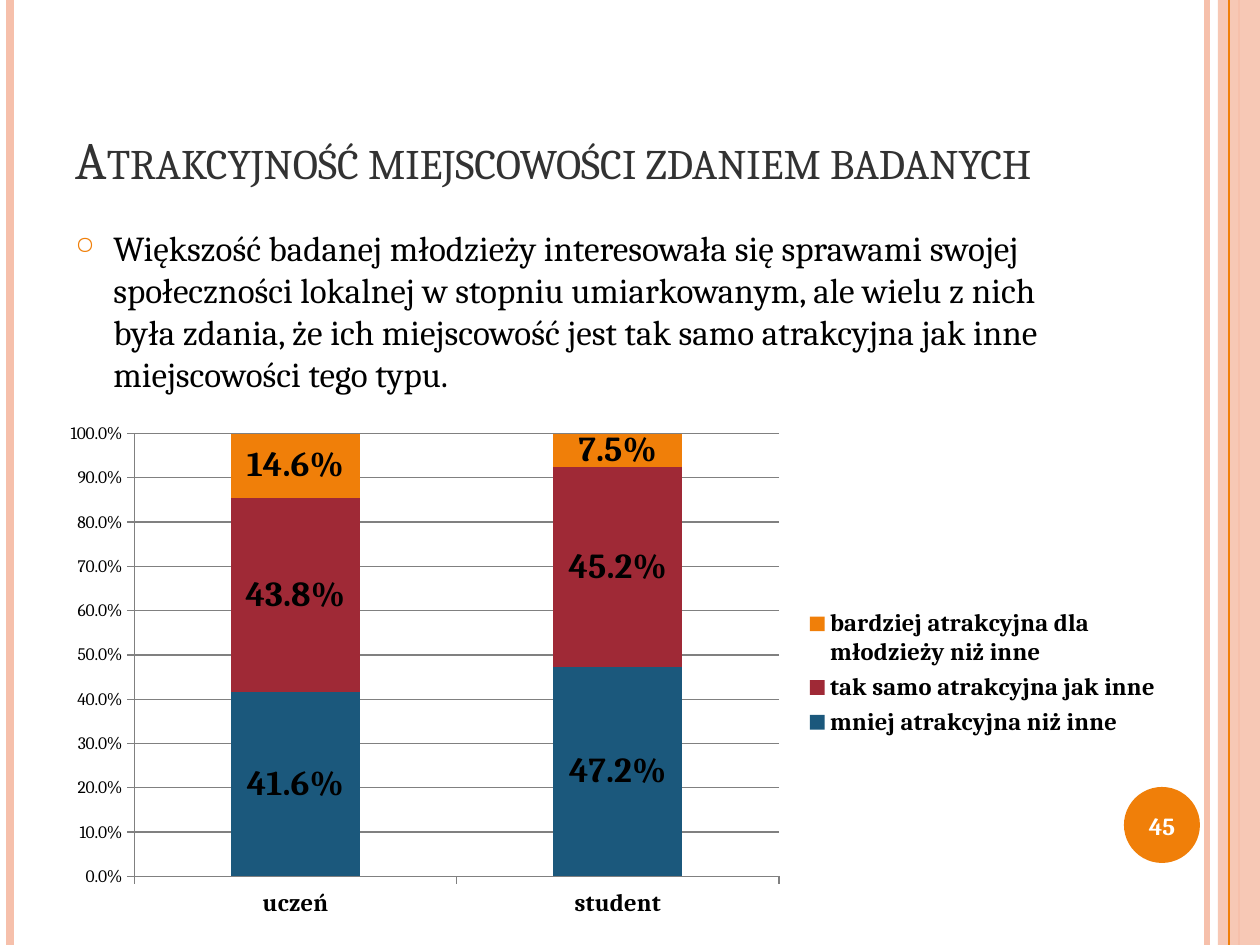
from lxml.etree import SubElement
from pptx import Presentation
from pptx.chart.data import CategoryChartData
from pptx.dml.color import RGBColor
from pptx.enum.chart import XL_CHART_TYPE, XL_LEGEND_POSITION, XL_TICK_MARK
from pptx.enum.shapes import MSO_CONNECTOR, MSO_SHAPE
from pptx.enum.text import MSO_ANCHOR, PP_ALIGN
from pptx.oxml import parse_xml
from pptx.oxml.ns import nsdecls, qn
from pptx.util import Pt

PX = 914400 / 126
WIDE, HIGH = 1260, 945
FONT = "Cambria"
HUES = {
    "pink": "F6C0AB", "orange": "F07F09", "red": "9F2936", "blue": "1B587C",
    "dark": "323232", "black": "000000", "white": "FFFFFF", "grey": "808080",
}
hue = {name: RGBColor.from_string(code) for name, code in HUES.items()}


def emu(*sizes):
    return [round(size * PX) for size in sizes]


def style(font, size, tone="black", bold=False):
    font.name, font.size, font.bold = FONT, Pt(size), bold
    font.color.rgb = hue[tone]


deck = Presentation()
deck.slide_width, deck.slide_height = emu(WIDE, HIGH)
slide = deck.slides.add_slide(deck.slide_layouts[6])
shapes = slide.shapes

# Side band
band = shapes.add_shape(MSO_SHAPE.RECTANGLE, *emu(1218, 0, 42, HIGH))
band.shadow.inherit = False
band.fill.solid()
band.fill.fore_color.rgb = hue["pink"]
band.line.fill.background()
tint = band.fill._xPr.find(qn("a:solidFill"))[0]
SubElement(tint, qn("a:alpha"), val="87000")

# Vertical rules
for x, tone, width in [(1207, "pink", 3), (10, "pink", 4.5),
                       (1239, "pink", 1.5), (1229, "orange", 0.75)]:
    rule = shapes.add_connector(MSO_CONNECTOR.STRAIGHT, *emu(x, 0, x, HIGH))
    rule.line.color.rgb = hue[tone]
    rule.line.width = Pt(width)
    SubElement(rule._element.spPr, qn("a:effectLst"))

# Page number disc
disc = shapes.add_shape(MSO_SHAPE.OVAL, *emu(1124, 787, 76, 76))
disc.shadow.inherit = False
disc.fill.solid()
disc.fill.fore_color.rgb = hue["orange"]
disc.line.fill.background()

# Title, body and page number
texts = [
    ("Atrakcyjność miejscowości zdaniem badanych",
     (63, 38, 1029, 158), 30, "dark", MSO_ANCHOR.BOTTOM),
    ("Większość badanej młodzieży interesowała się sprawami swojej "
     "społeczności lokalnej w stopniu umiarkowanym, ale wielu z nich była "
     "zdania, że ich miejscowość jest tak samo atrakcyjna jak inne "
     "miejscowości tego typu.",
     (63, 220, 1029, 672), 20, "black", MSO_ANCHOR.TOP),
    ("45", (1120, 790, 84, 72), 14, "white", MSO_ANCHOR.MIDDLE),
]
paras = []
for words, place, size, tone, anchor in texts:
    frame = shapes.add_textbox(*emu(*place)).text_frame
    frame.word_wrap = True
    frame.vertical_anchor = anchor
    para = frame.paragraphs[0]
    run = para.add_run()
    run.text = words
    style(run.font, size, tone)
    paras.append(para)
title, body, page = paras
title.runs[0].font._element.set("cap", "small")
page.alignment = PP_ALIGN.CENTER
page.runs[0].font.bold = True

# Body bullet
body.space_before = Pt(6)
props = body._p.get_or_add_pPr()
dent = emu(38)[0]
props.set("marL", str(dent))
props.set("indent", str(-dent))
shade = SubElement(props, qn("a:buClr"))
SubElement(shade, qn("a:srgbClr"), val=HUES["orange"])
SubElement(props, qn("a:buSzPct"), val="70000")
SubElement(props, qn("a:buChar"), char="○")

# Stacked chart
series = [
    ("mniej atrakcyjna niż inne", (0.416, 0.472), "blue"),
    ("tak samo atrakcyjna jak inne", (0.438, 0.452), "red"),
    ("bardziej atrakcyjna dla młodzieży niż inne", (0.146, 0.075), "orange"),
]
data = CategoryChartData(number_format="0.0%")
data.categories = ["uczeń", "student"]
for name, vals, tone in series:
    data.add_series(name, vals)
chart = shapes.add_chart(XL_CHART_TYPE.COLUMN_STACKED,
                         *emu(44, 413, 1131, 515), data).chart
chart.has_title = False
style(chart.font, 10)
plot = chart.plots[0]
plot.gap_width, plot.overlap = 150, 100
plot.vary_by_categories = False
for item, (name, vals, tone) in zip(plot.series, series):
    item.format.fill.solid()
    item.format.fill.fore_color.rgb = hue[tone]
    labels = item.data_labels
    labels.show_value = True
    labels.number_format = "0.0%"
    labels.number_format_is_linked = False
    style(labels.font, 20, bold=True)

# Axes
cats, vals = chart.category_axis, chart.value_axis
vals.minimum_scale, vals.maximum_scale, vals.major_unit = 0, 1, 0.1
vals.has_major_gridlines = True
vals.tick_labels.number_format = "0.0%"
vals.tick_labels.number_format_is_linked = False
style(vals.tick_labels.font, 10)
style(cats.tick_labels.font, 14, bold=True)
for axis in (cats, vals):
    axis.major_tick_mark = XL_TICK_MARK.OUTSIDE
    axis.minor_tick_mark = XL_TICK_MARK.NONE
for part in (cats, vals, vals.major_gridlines):
    part.format.line.color.rgb = hue["grey"]
    part.format.line.width = Pt(0.75)

# Legend
chart.has_legend = True
legend = chart.legend
legend.position = XL_LEGEND_POSITION.RIGHT
legend.include_in_layout = False
style(legend.font, 14, bold=True)

# Fixed places of plot and legend, as shares of the chart
area = chart._chartSpace.chart.plotArea
key = legend._element
for owner, spot, inner, shares in [
        (area, 0, True, (0.08, 0.04, 0.57, 0.86)),
        (key, 1, False, (0.67, 0.37, 0.32, 0.27))]:
    for old in owner.findall(qn("c:layout")):
        owner.remove(old)
    layout = parse_xml(f"<c:layout {nsdecls('c')}/>")
    manual = SubElement(layout, qn("c:manualLayout"))
    if inner:
        SubElement(manual, qn("c:layoutTarget"), val="inner")
    for side in "xy":
        SubElement(manual, qn(f"c:{side}Mode"), val="edge")
    for side, share in zip("xywh", shares):
        SubElement(manual, qn(f"c:{side}"), val=str(share))
    owner.insert(spot, layout)

deck.save("out.pptx")
